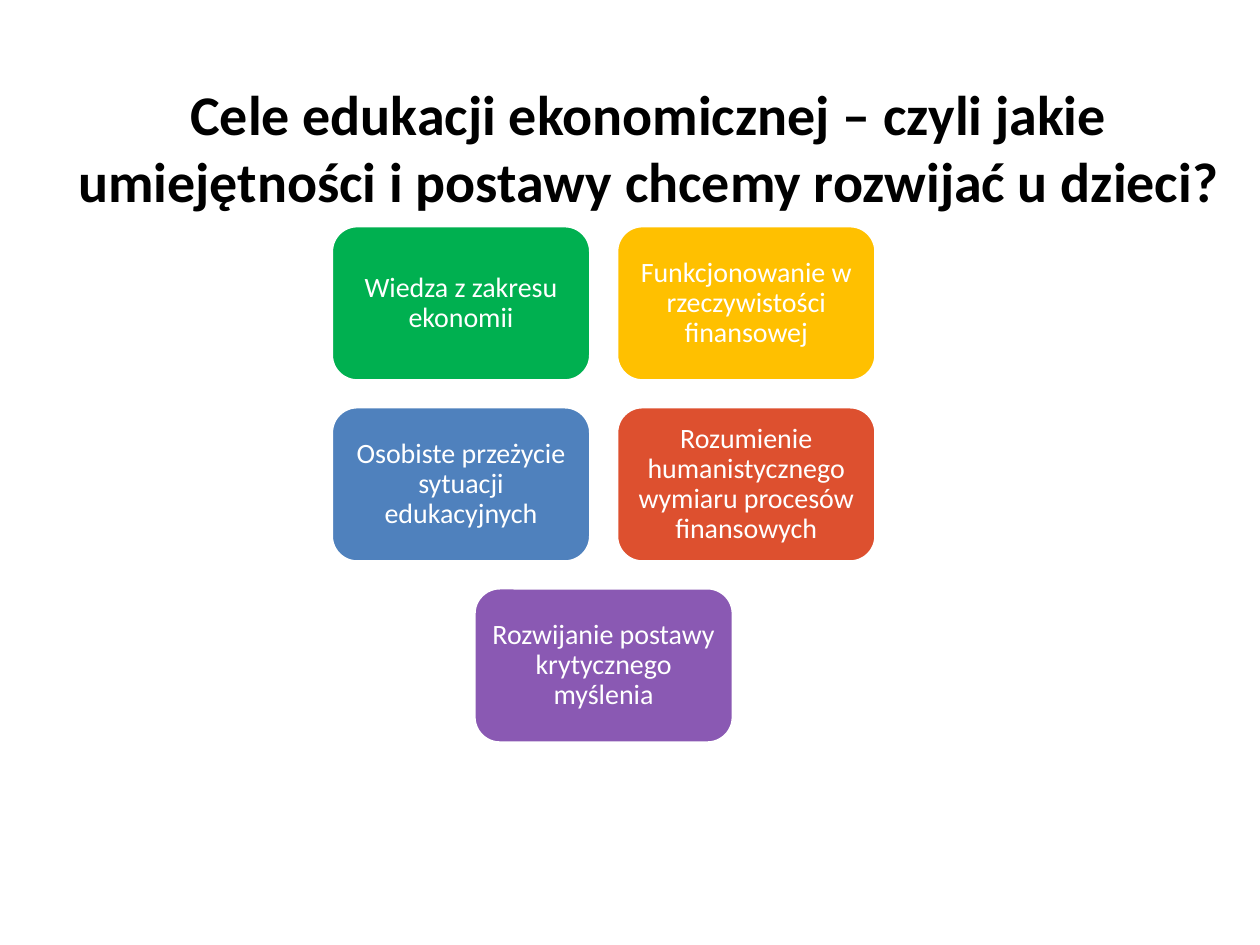
from pptx import Presentation
from pptx.dml.color import RGBColor
from pptx.enum.shapes import MSO_SHAPE as Shape
from pptx.enum.text import MSO_ANCHOR as Anchor, PP_ALIGN as Align
from pptx.util import Cm, Pt

BLACK = RGBColor(0, 0, 0)
WHITE = RGBColor(255, 255, 255)
GREEN = RGBColor(0x00, 0xB0, 0x50)
AMBER = RGBColor(0xFF, 0xC0, 0x00)
BLUE = RGBColor(0x4F, 0x81, 0xBD)
RED = RGBColor(0xDD, 0x50, 0x2F)
PURPLE = RGBColor(0x8A, 0x59, 0xB3)

TITLE = "Cele edukacji ekonomicznej – czyli jakie\numiejętności i postawy chcemy rozwijać u dzieci?"
ROWS = [
    [("Wiedza z zakresu ekonomii", GREEN),
     ("Funkcjonowanie w rzeczywistości finansowej", AMBER)],
    [("Osobiste przeżycie sytuacji edukacyjnych", BLUE),
     ("Rozumienie humanistycznego wymiaru procesów finansowych", RED)],
    [("Rozwijanie postawy krytycznego myślenia", PURPLE)],
]
HEAD = dict(name="Calibri", size=Pt(32), bold=True)
BODY = dict(name="Calibri", size=Pt(16), bold=False)
MID, TOP = 12.17, 4.55
WIDE, HIGH, GAP = 5.23, 3.13, 0.52


def write(box, text, look, color, pad, lead=1.0):
    frame = box.text_frame
    side, edge = pad
    frame_look = dict(word_wrap=True, vertical_anchor=Anchor.MIDDLE,
                      margin_left=Cm(side), margin_right=Cm(side),
                      margin_top=Cm(edge), margin_bottom=Cm(edge))
    for key, value in frame_look.items():
        setattr(frame, key, value)
    para = frame.paragraphs[0]
    para.text = text
    para.alignment = Align.CENTER
    para.line_spacing = lead
    for run in para.runs:
        for key, value in look.items():
            setattr(run.font, key, value)
        run.font.color.rgb = color


deck = Presentation()
deck.slide_width, deck.slide_height = Cm(25.4), Cm(19.05)
slide = deck.slides.add_slide(deck.slide_layouts[6])

title = slide.shapes.add_textbox(Cm(1.27), Cm(1.37), Cm(23.62), Cm(3.18))
write(title, TITLE, HEAD, BLACK, (0.25, 0.13))

goals = slide.shapes.add_group_shape().shapes
for i, row in enumerate(ROWS):
    span = len(row) * (WIDE + GAP) - GAP
    top = TOP + i * (HIGH + GAP)
    for j, (text, fill) in enumerate(row):
        left = MID - span / 2 + j * (WIDE + GAP)
        card = goals.add_shape(Shape.ROUNDED_RECTANGLE, Cm(left), Cm(top), Cm(WIDE), Cm(HIGH))
        card.shadow.inherit = False
        card.fill.solid()
        card.fill.fore_color.rgb = fill
        card.line.color.rgb = WHITE
        card.line.width = Pt(2)
        write(card, text, BODY, WHITE, (0.17, 0.17), 0.9)

deck.save("out.pptx")
